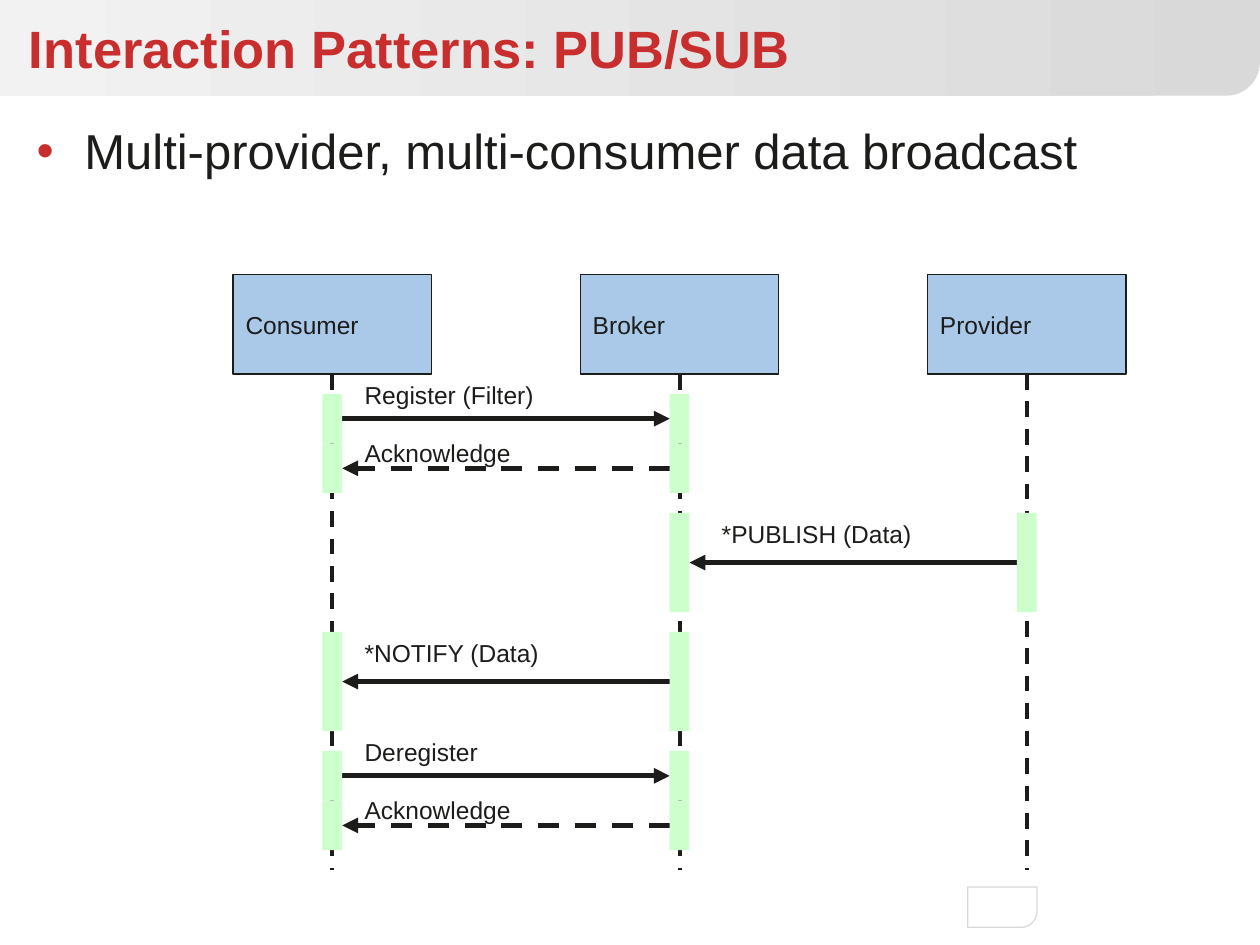
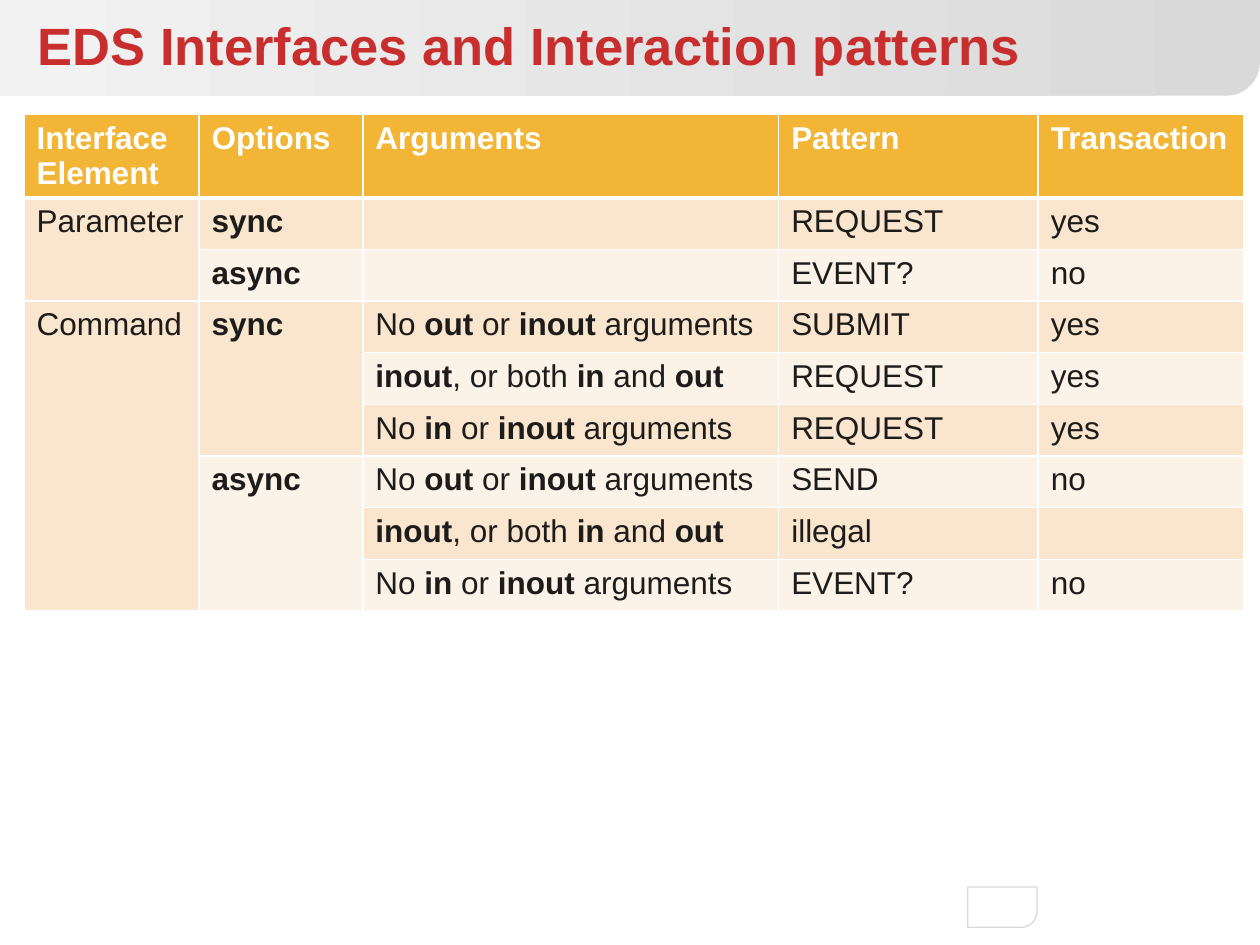
from lxml import etree
from pptx import Presentation
from pptx.dml.color import RGBColor
from pptx.enum.dml import MSO_LINE as Dash
from pptx.enum.shapes import MSO_CONNECTOR as Link, MSO_SHAPE as Form
from pptx.enum.text import MSO_ANCHOR as Anchor, MSO_AUTO_SIZE as Fit, PP_ALIGN as Align
from pptx.oxml.ns import qn
from pptx.util import Inches, Mm, Pt

hue = RGBColor.from_string
INK, RED, WHITE = "1C1C1A", "C72E2D", "FFFFFF"
BLUE, GREEN, GOLD = "AAC9E9", "CCFFCC", "F2B535"
BANDS = ["FCF3E8", "FAE5CE"]  # even rows, odd rows
DARK, LIGHT = "D9D9D9", "F2F2F2"


def cells(*counts):
    """Turn counts of 4 mm grid cells into lengths."""
    return [round(n * Mm(4)) for n in counts]


def write(par, text, size, color=INK, bold=None):
    """Fill a paragraph; words between asterisk pairs '**' turn bold."""
    for i, part in enumerate(text.split("**")):
        if part:
            run = par.add_run()
            run.text = part
            if i % 2:
                run.font.bold = True
    par.alignment = Align.LEFT
    font = par.font
    font.name, font.size, font.bold = "Arial", Pt(size), bold
    font.color.rgb = hue(color)


deck = Presentation()
deck.slide_width, deck.slide_height = Inches(10), Inches(7.5)
flow = deck.slides.add_slide(deck.slide_layouts[1])
grid = deck.slides.add_slide(deck.slide_layouts[5])

# Master: header band and page tab, both rounded at lower right
tree = deck.slide_master.shapes.element
for i, (box, bend) in enumerate([((0, 0, 10, 0.76), 0.35), ((7.68, 7.04, 0.55, 0.32), 0.39)]):
    band = flow.shapes.add_shape(Form.ROUND_1_RECTANGLE, *map(Inches, box))
    band.adjustments[0] = bend
    band.shadow.inherit = False
    band.element.spPr.get_or_add_xfrm().set("flipV", "1")
    if i == 0:
        band.fill.gradient()
        band.fill.gradient_angle = 180
        for stop, tone in zip(band.fill.gradient_stops, (DARK, LIGHT)):
            stop.color.rgb = hue(tone)
        band.line.fill.background()
    else:
        band.fill.background()
        band.line.color.rgb = hue(DARK)
        band.line.width = Pt(0.75)
    band.element.nvSpPr.cNvPr.set("id", str(20 + i))
    tree.insert(2 + i, band.element)

# Titles
for slide, text, left, top in [
    (flow, "Interaction Patterns: PUB/SUB", 0.13, 0.08),
    (grid, "EDS Interfaces and Interaction patterns", 0.2, 0.05),
]:
    title = slide.shapes.title
    title.left, title.top, title.width, title.height = map(Inches, (left, top, 9.73, 0.6))
    frame = title.text_frame
    frame.auto_size, frame.vertical_anchor = Fit.NONE, Anchor.MIDDLE
    write(frame.paragraphs[0], text, 30, RED, True)

# Slide 1: bullet
body = flow.placeholders[1]
body.left, body.top, body.width, body.height = map(Inches, (0.19, 0.91, 9.67, 6))
body.text_frame.auto_size = Fit.NONE
par = body.text_frame.paragraphs[0]
props = par._p.get_or_add_pPr()
props.set("marL", str(Inches(0.38)))
props.set("indent", str(-Inches(0.38)))
tint = etree.SubElement(props, qn("a:buClr"))
etree.SubElement(tint, qn("a:srgbClr"), val=RED)
etree.SubElement(props, qn("a:buFont"), typeface="Arial")
etree.SubElement(props, qn("a:buChar"), char="•")
par.space_before = Pt(0)
write(par, "Multi-provider, multi-consumer data broadcast", 28)

# Slide 1: sequence diagram, measured in grid cells
TOP, HEAD, LIFE = 13.85, 5, 25
axes = [16.75 + 17.5 * i for i in range(3)]
user, broker, maker = axes
# sender, receiver, bar row, bar height, label, label row, label inset, dashed
calls = [
    (user, broker, 6, 2.5, "Register (Filter)", 5, 1, False),
    (broker, user, 8.5, 2.5, "Acknowledge", 7.9, 1, True),
    (maker, broker, 12, 5, "*PUBLISH (Data)", 12, 1.5, False),
    (broker, user, 18, 5, "*NOTIFY (Data)", 18, 1, False),
    (user, broker, 24, 2.5, "Deregister", 23, 1, False),
    (broker, user, 26.5, 2.5, "Acknowledge", 25.9, 1, True),
]
base = TOP + HEAD
lines = [(x, base, x, base + LIFE, 2.25, True, False) for x in axes]
blocks = [(x - 5, TOP, 10, HEAD, BLUE, name)
          for x, name in zip(axes, ("Consumer", "Broker", "Provider"))]
for src, dst, row, tall, label, at, inset, dashed in calls:
    side = 0.5 if dst > src else -0.5
    mid = TOP + row + tall / 2
    lines.append((src + side, mid, dst - side, mid, 3, dashed, True))
    blocks += [(x - 0.5, TOP + row, 1, tall, GREEN, "") for x in (src, dst)]

for x1, y1, x2, y2, thick, dashed, arrow in lines:
    link = flow.shapes.add_connector(Link.STRAIGHT, *cells(x1, y1, x2, y2))
    link.line.color.rgb = hue(INK)
    link.line.width = Pt(thick)
    if dashed:
        link.line.dash_style = Dash.DASH
    shape = link.element.spPr
    if arrow:
        etree.SubElement(shape.find(qn("a:ln")), qn("a:tailEnd"), type="triangle")
    etree.SubElement(shape, qn("a:effectLst"))

for x, y, wide, tall, color, name in blocks:
    block = flow.shapes.add_shape(Form.RECTANGLE, *cells(x, y, wide, tall))
    block.shadow.inherit = False
    block.fill.solid()
    block.fill.fore_color.rgb = hue(color)
    if name:
        block.line.color.rgb = hue(INK)
        block.line.width = Pt(0.75)
        block.text_frame.vertical_anchor = Anchor.MIDDLE
        write(block.text_frame.paragraphs[0], name, 14)
    else:
        block.line.fill.background()

for src, dst, row, tall, label, at, inset, dashed in calls:
    note = flow.shapes.add_textbox(*cells(min(src, dst) + inset, TOP + at, 15, 2.1))
    note.text_frame.word_wrap = True
    note.text_frame.auto_size = Fit.SHAPE_TO_FIT_TEXT
    write(note.text_frame.paragraphs[0], label, 14)

# Slide 2: table
NO_OUT = "No **out** or **inout** arguments"
BOTH = "**inout**, or both **in** and **out**"
NO_IN = "No **in** or **inout** arguments"
rows = [
    ("Interface Element", "Options", "Arguments", "Pattern", "Transaction"),
    ("Parameter", "**sync**", "", "REQUEST", "yes"),
    ("", "**async**", "", "EVENT?", "no"),
    ("Command", "**sync**", NO_OUT, "SUBMIT", "yes"),
    ("", "", BOTH, "REQUEST", "yes"),
    ("", "", NO_IN, "REQUEST", "yes"),
    ("", "**async**", NO_OUT, "SEND", "no"),
    ("", "", BOTH, "illegal", ""),
    ("", "", NO_IN, "EVENT?", "no"),
]
spans = [(1, 2, 0), (3, 8, 0), (3, 5, 1), (6, 8, 1)]  # first row, last row, column
holder = grid.shapes.add_table(len(rows), 5, *map(Inches, (0.19, 0.91, 9.67, 3.94)))
table = holder.table
table.horz_banding = False
for col, wide in zip(table.columns, (1.39, 1.3, 3.3, 2.06, 1.63)):
    col.width = Inches(wide)
for r, texts in enumerate(rows):
    table.rows[r].height = Inches(0.41 if r else 0.66)
    for c, text in enumerate(texts):
        cell = table.cell(r, c)
        cell.fill.solid()
        cell.fill.fore_color.rgb = hue(BANDS[r % 2] if r else GOLD)
        write(cell.text_frame.paragraphs[0], text, 18, INK if r else WHITE, None if r else True)
for first, last, c in spans:
    table.cell(first, c).merge(table.cell(last, c))

for r, row in enumerate(holder.element.iter(qn("a:tr"))):
    for props in row.iter(qn("a:tcPr")):
        for i, side in enumerate("LRTB"):
            thick = 3 if (r, side) in ((0, "B"), (1, "T")) else 1
            edge = etree.Element(qn("a:ln" + side), w=str(Pt(thick)))
            paint = etree.SubElement(edge, qn("a:solidFill"))
            etree.SubElement(paint, qn("a:srgbClr"), val=WHITE)
            props.insert(i, edge)

deck.save("out.pptx")
